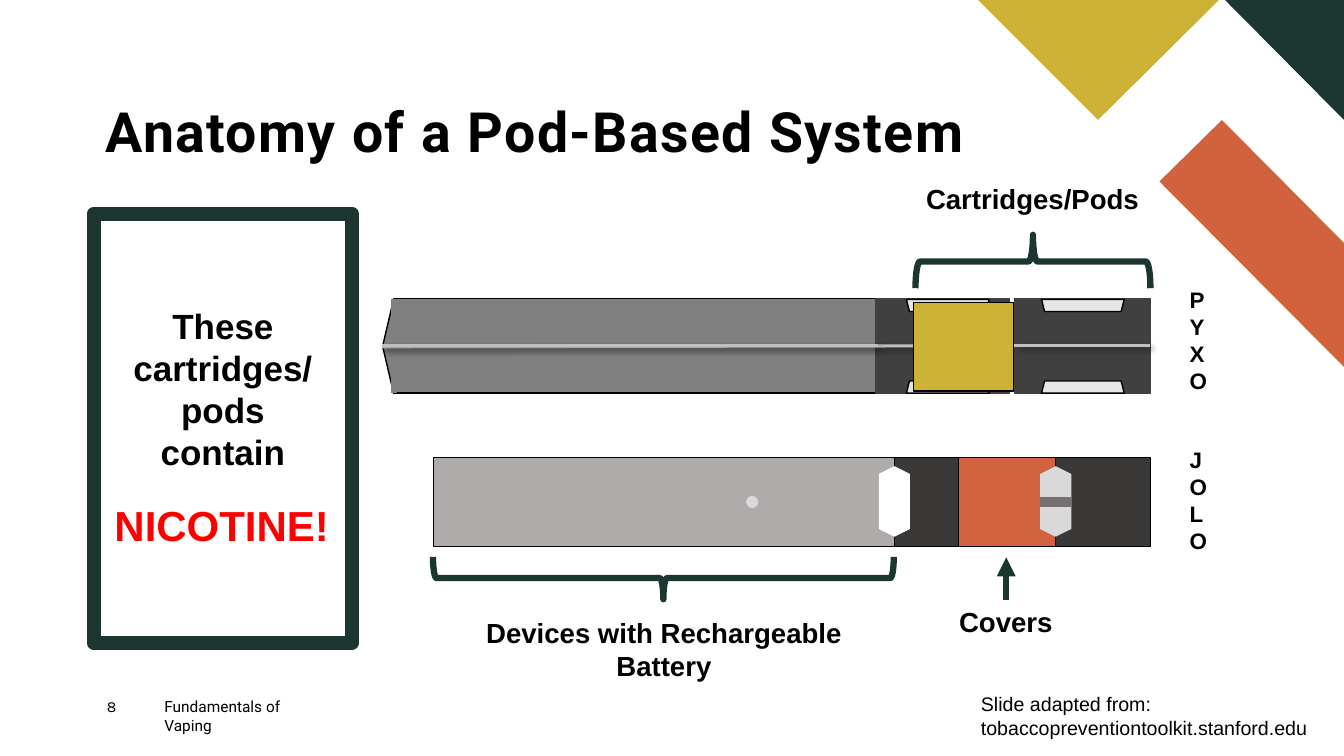
import pptx
import pptx.dml.color
import pptx.enum.shapes
import pptx.enum.text
import pptx.oxml
import pptx.oxml.ns
import pptx.util

PX = 9144
COLOURS = {
    "black": "000000",
    "white": "FFFFFF",
    "red": "FF0000",
    "forest": "1C3731",
    "pine": "1B3630",
    "orange": "D2623E",
    "cover_orange": "D3623E",
    "gold": "CDB236",
    "cover_gold": "CDB235",
    "body_grey": "808080",
    "pod_grey": "404040",
    "ridge": "BFBFBF",
    "notch": "E7E6E6",
    "device": "AFABAB",
    "cartridge": "3B3838",
    "light": "D9D9D9",
    "slot": "767171",
}
SHAPE = pptx.enum.shapes.MSO_SHAPE
ALIGN = pptx.enum.text.PP_ALIGN
ANCHOR = pptx.enum.text.MSO_ANCHOR


class SlideBuilder:
    """Draws styled elements, measured in px, on one slide."""

    def __init__(self, slide):
        self.slide = slide

    def colour(self, name):
        return pptx.dml.color.RGBColor.from_string(COLOURS[name])

    def paint(self, shape, fill, line=None, width=1):
        shape.shadow.inherit = False
        if fill:
            shape.fill.solid()
            shape.fill.fore_color.rgb = self.colour(fill)
        else:
            shape.fill.background()
        if line:
            shape.line.color.rgb = self.colour(line)
            shape.line.width = pptx.util.Pt(width)
        else:
            shape.line.fill.background()

    def shape(self, kind, box, fill, line=None, width=1, rotation=0):
        shape = self.slide.shapes.add_shape(kind, *(value * PX for value in box))
        shape.rotation = rotation
        self.paint(shape, fill, line, width)

    def polygon(self, points, fill):
        builder = self.slide.shapes.build_freeform(*points[0], scale=PX)
        builder.add_line_segments(points[1:], close=True)
        self.paint(builder.convert_to_shape(), fill)

    def line(self, start, end, colour, width, shadow=False, arrow=False):
        connector = self.slide.shapes.add_connector(
            pptx.enum.shapes.MSO_CONNECTOR.STRAIGHT,
            *(value * PX for value in start + end))
        connector.line.color.rgb = self.colour(colour)
        connector.line.width = pptx.util.Pt(width)
        if arrow:
            tail = pptx.oxml.parse_xml(
                f'<a:tailEnd {pptx.oxml.ns.nsdecls("a")} type="triangle"/>')
            connector.line._get_or_add_ln().append(tail)
        effect = (
            '<a:outerShdw blurRad="50800" dist="38100" dir="2700000" algn="tl">'
            '<a:srgbClr val="000000"><a:alpha val="40000"/></a:srgbClr>'
            '</a:outerShdw>') if shadow else ""
        connector._element.spPr.append(pptx.oxml.parse_xml(
            f'<a:effectLst {pptx.oxml.ns.nsdecls("a")}>{effect}</a:effectLst>'))

    def text(self, box, lines, size, font="Arial", colour="black", bold=True,
             align=ALIGN.CENTER, inset=True, anchor=ANCHOR.TOP,
             line_spacing=None, letter_spacing=None):
        shape = self.slide.shapes.add_textbox(*(value * PX for value in box))
        frame = shape.text_frame
        frame.word_wrap = True
        frame.vertical_anchor = anchor
        if inset:
            frame.auto_size = pptx.enum.text.MSO_AUTO_SIZE.SHAPE_TO_FIT_TEXT
        else:
            frame.margin_left = frame.margin_right = 0
            frame.margin_top = frame.margin_bottom = 0
        for index, line in enumerate(lines):
            paragraph = frame.add_paragraph() if index else frame.paragraphs[0]
            paragraph.alignment = align
            if line_spacing:
                paragraph.line_spacing = line_spacing
            run = paragraph.add_run()
            run.text = line
            run.font.name = font
            run.font.size = pptx.util.Pt(size)
            run.font.bold = bold
            run.font.color.rgb = self.colour(colour)
            if letter_spacing:
                run._r.get_or_add_rPr().set("spc", str(letter_spacing * 100))


def draw_decoration(builder):
    builder.polygon([(1333, 364), (1333, 241), (1212, 119), (1150, 180)], "orange")
    builder.polygon([(1333, 119), (1333, 0), (1215, 0)], "forest")
    builder.polygon([(970, 0), (1089, 119), (1209, 0)], "gold")


def draw_lower_device(builder):
    builder.shape(SHAPE.RECTANGLE, (887, 454, 94, 88), "cartridge", "black")
    builder.shape(SHAPE.RECTANGLE, (1047, 454, 94, 88), "cartridge", "black")
    builder.shape(SHAPE.RECTANGLE, (951, 454, 96, 88), "cover_orange", "black")
    builder.shape(SHAPE.HEXAGON, (1012, 482, 70, 31), "light", rotation=90)
    builder.line((1032, 498), (1062, 498), "slot", 7.5)
    builder.shape(SHAPE.RECTANGLE, (430, 454, 457, 88), "device", "black")
    builder.shape(SHAPE.HEXAGON, (852, 482, 70, 31), "white", rotation=90)
    builder.shape(SHAPE.OVAL, (740, 492, 12, 12), "light")


def draw_pod(builder, left, width, notch_left):
    builder.shape(SHAPE.RECTANGLE, (left, 296, width, 94), "pod_grey", "pod_grey")
    for top, rotation in ((378, 0), (297, 180)):
        builder.shape(SHAPE.TRAPEZOID, (notch_left, top, 82, 12), "notch", "black",
                      rotation=rotation)


def draw_upper_device(builder):
    builder.shape(SHAPE.RECTANGLE, (391, 296, 480, 94), "body_grey", "black")
    draw_pod(builder, 869, 132, 899)
    builder.shape(SHAPE.ISOSCELES_TRIANGLE, (338, 338, 94, 11), "body_grey", "black",
                  rotation=270)
    builder.line((391, 297), (391, 390), "body_grey", 4.5)
    builder.line((379, 344), (1001, 343), "ridge", 2.25, shadow=True)
    draw_pod(builder, 1006, 135, 1033)
    for start, end in ((379, 871), (1006, 1141)):
        builder.line((start, 343), (end, 343), "ridge", 2.25, shadow=True)
    builder.shape(SHAPE.RECTANGLE, (906, 300, 99, 88), "cover_gold", "black")


def draw_labels(builder):
    builder.shape(SHAPE.LEFT_BRACE, (637, 345, 42, 457), None, "pine", 4.5, 270)
    builder.line((998, 595), (998, 553), "pine", 4.5, arrow=True)
    builder.shape(SHAPE.LEFT_BRACE, (998, 143, 53, 233), None, "pine", 4.5, 90)
    builder.text((462, 606, 393, 76), ["Devices with Rechargeable", "Battery"], 19.7)
    builder.text((898, 595, 199, 43), ["Covers"], 19.7)
    builder.text((842, 176, 364, 43), ["Cartridges/Pods"], 19.7)
    for top, device_name in ((279, "PYXO"), (438, "JOLO")):
        builder.text((1170, top, 32, 118), device_name, 16)


def draw_warning(builder):
    builder.shape(SHAPE.RECTANGLE, (93, 212, 256, 426), None, "pine", 10)
    builder.text((115, 297, 212, 178), ["These cartridges/pods contain"], 25)
    builder.text((103, 491, 234, 61), ["NICOTINE!"], 30, colour="red")


def draw_title_and_footer(builder):
    builder.text((105, 96, 870, 67), ["Anatomy of a Pod-Based System"], 39.6, "Roboto",
                 align=ALIGN.LEFT, inset=False, anchor=ANCHOR.BOTTOM,
                 line_spacing=0.9, letter_spacing=1)
    for left, width, line, font in ((163, 164, "Fundamentals of Vaping", "Roboto"),
                                    (106, 57, "8", "Karla")):
        builder.text((left, 692, width, 27), [line], 11, font, bold=False,
                     align=ALIGN.LEFT, inset=False)
    builder.text((963, 682, 348, 57),
                 ["Slide adapted from:", "tobaccopreventiontoolkit.stanford.edu"],
                 14, bold=False, align=ALIGN.LEFT)


def main():
    presentation = pptx.Presentation()
    presentation.slide_width = 1333 * PX
    presentation.slide_height = 750 * PX
    builder = SlideBuilder(presentation.slides.add_slide(presentation.slide_layouts[6]))
    draw_decoration(builder)
    draw_lower_device(builder)
    draw_upper_device(builder)
    draw_labels(builder)
    draw_warning(builder)
    draw_title_and_footer(builder)
    presentation.save("out.pptx")


if __name__ == "__main__":
    main()
